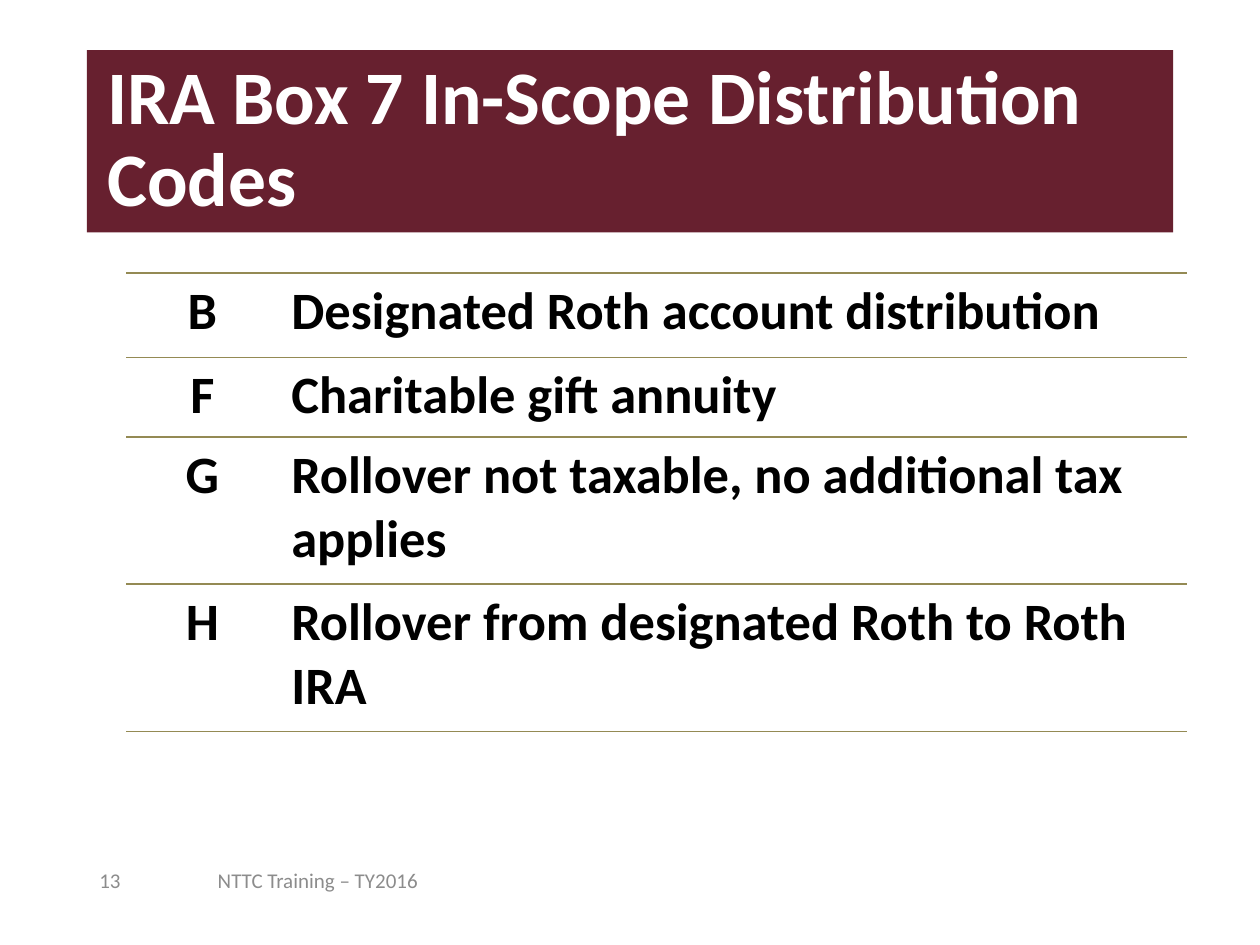
from lxml.etree import SubElement
from pptx import Presentation
from pptx.dml.color import RGBColor
from pptx.enum.text import MSO_ANCHOR, PP_ALIGN
from pptx.oxml.ns import qn
from pptx.util import Inches, Pt

HUES = {"wine": "67202F", "white": "FFFFFF", "black": "000000",
        "gray": "8C8C8C", "olive": "948A54"}
FONT = "Calibri"
WIDE, HIGH = Inches(10), Inches(7.5)

CODES = [
    ("B", "Designated Roth account distribution"),
    ("F", "Charitable gift annuity"),
    ("G", "Rollover not taxable, no additional tax applies"),
    ("H", "Rollover from designated Roth to Roth IRA"),
]
ROWS = (0.67, 0.63, 1.17, 1.17)  # row heights in inches


def area(x, y, w, h):
    """Turn shares of the slide's size into a box."""
    return int(WIDE * x), int(HIGH * y), int(WIDE * w), int(HIGH * h)


def put(part, box):
    part.left, part.top, part.width, part.height = box


def write(para, text, size, hue, bold=False):
    run = para.add_run()
    run.text = text
    font = run.font
    font.name, font.size, font.bold = FONT, Pt(size), bold
    font.color.rgb = RGBColor.from_string(HUES[hue])


def edge(cell, sides):
    """Rule the named sides of a cell and leave the others bare."""
    props = cell._tc.get_or_add_tcPr()
    for i, side in enumerate(("lnL", "lnR", "lnT", "lnB")):
        line = SubElement(props, qn(f"a:{side}"), w=str(Pt(1)))
        props.remove(line)
        props.insert(i, line)
        if side in sides:
            fill = SubElement(line, qn("a:solidFill"))
            SubElement(fill, qn("a:srgbClr"), val=HUES["olive"])
        else:
            SubElement(line, qn("a:noFill"))


def head(slide, box):
    title = slide.shapes.title
    put(title, box)
    title.fill.solid()
    title.fill.fore_color.rgb = RGBColor.from_string(HUES["wine"])
    frame = title.text_frame
    frame.word_wrap = True
    frame.vertical_anchor = MSO_ANCHOR.MIDDLE
    para = frame.paragraphs[0]
    para.alignment = PP_ALIGN.LEFT
    para.line_spacing = 0.9
    para._p.get_or_add_pPr().set("marL", str(Inches(0.06)))
    write(para, "IRA Box 7 In-Scope Distribution Codes", 43.2, "white", True)


def grid(slide, box):
    left, top, wide, high = box
    table = slide.shapes.add_table(len(CODES), 2, left, top, wide, high).table
    table.first_row = table.horz_banding = False
    code = int(wide * 0.144)
    table.columns[0].width = code
    table.columns[1].width = wide - code
    for r, (row, share) in enumerate(zip(CODES, ROWS)):
        table.rows[r].height = int(high * share / sum(ROWS))
        for c, text in enumerate(row):
            cell = table.cell(r, c)
            cell.fill.background()
            edge(cell, ("lnT", "lnB"))
            para = cell.text_frame.paragraphs[0]
            para.alignment = PP_ALIGN.LEFT if c else PP_ALIGN.CENTER
            write(para, text, 30, "black", True)


def note(slide, box, text):
    frame = slide.shapes.add_textbox(*box).text_frame
    frame.word_wrap = True
    frame.vertical_anchor = MSO_ANCHOR.MIDDLE
    write(frame.paragraphs[0], text, 12, "gray")


def main():
    deck = Presentation()
    deck.slide_width, deck.slide_height = WIDE, HIGH
    slide = deck.slides.add_slide(deck.slide_layouts[5])

    # Title band
    head(slide, area(0.069, 0.053, 0.862, 0.193))
    # Footer: text and page number
    note(slide, area(0.163, 0.905, 0.377, 0.053), "NTTC Training – TY2016")
    note(slide, area(0.069, 0.905, 0.07, 0.053), "13")
    # Distribution codes
    grid(slide, area(0.1, 0.289, 0.842, sum(ROWS) / 7.5))

    deck.save("out.pptx")


if __name__ == "__main__":
    main()
